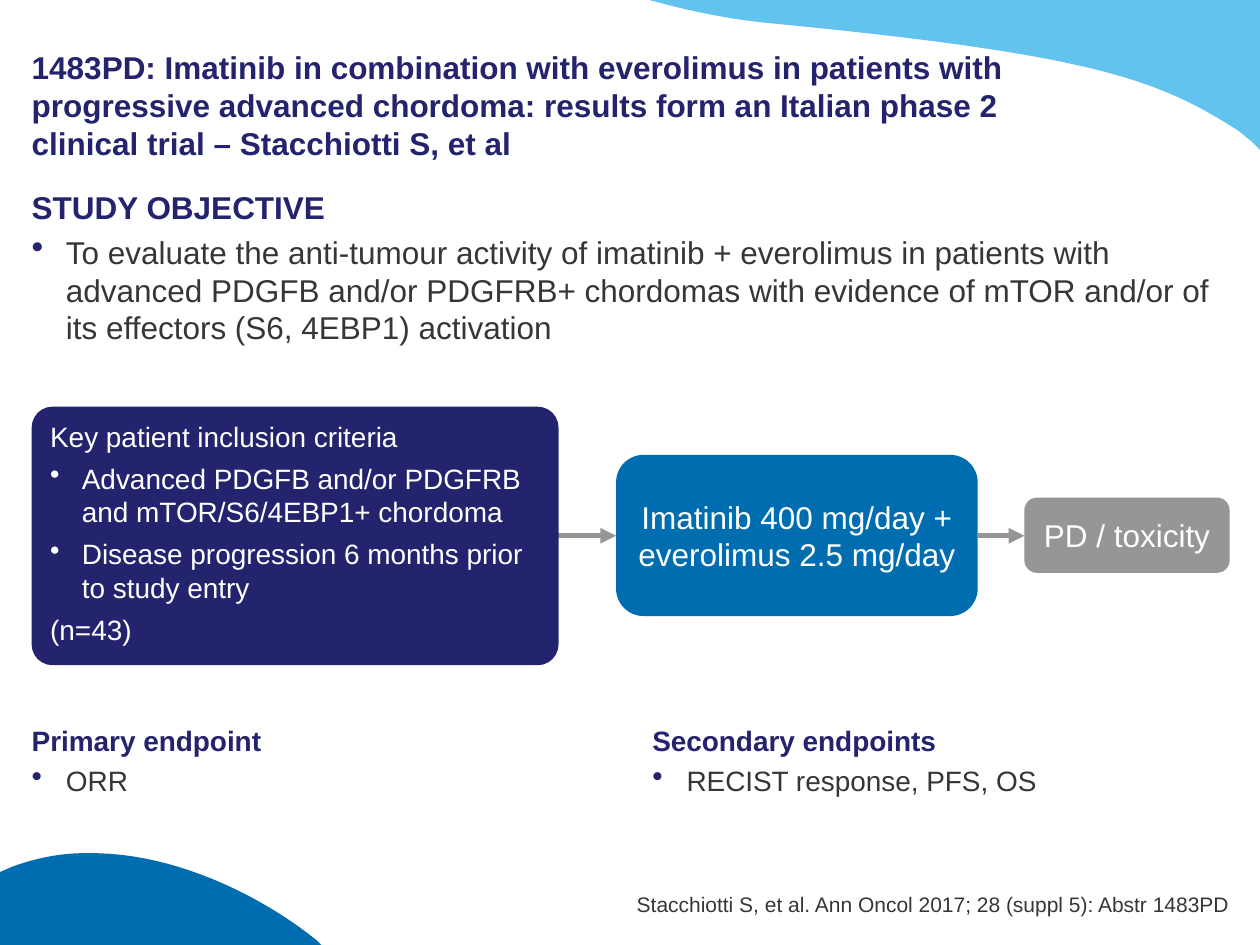
"""Build the chordoma study design slide."""
import lxml.etree
import pptx
import pptx.dml.color
import pptx.enum.shapes
import pptx.enum.text
import pptx.oxml.ns
import pptx.util

Cm, Pt = pptx.util.Cm, pptx.util.Pt
qn = pptx.oxml.ns.qn
ALIGN, ANCHOR = pptx.enum.text.PP_ALIGN, pptx.enum.text.MSO_ANCHOR
NAVY, BLUE, SKY, GREY, DARK, WHITE = "23246D", "006DB0", "62C4EE", "969696", "363636", "FFFFFF"


def paint(target, color):
    """Give a fill or line fill one solid colour."""
    target.solid()
    target.fore_color.rgb = pptx.dml.color.RGBColor.from_string(color)


def write(shape, rows, size, insets, anchor=ANCHOR.TOP, align=ALIGN.LEFT, after=0, bullet=(NAVY, 110)):
    """Write rows of (text, colour, bold, hanging indent in cm) into a shape."""
    tf = shape.text_frame
    tf.word_wrap = True
    tf.vertical_anchor = anchor
    tf.margin_left, tf.margin_top, tf.margin_right, tf.margin_bottom = [Cm(n) for n in insets]
    tf.text = "\n".join(row[0] for row in rows)
    for p, (text, color, bold, indent) in zip(tf.paragraphs, rows):
        p.alignment = align
        p.space_after = Pt(after)
        for r in p.runs:
            r.font.name, r.font.size, r.font.bold = "Arial", Pt(size), bold
            paint(r.font.fill, color)
        if indent:
            pPr = p._p.get_or_add_pPr()
            pPr.set("marL", str(Cm(indent)))
            pPr.set("indent", str(-Cm(indent)))
            tint = lxml.etree.SubElement(pPr, qn("a:buClr"))
            lxml.etree.SubElement(tint, qn("a:srgbClr"), val=bullet[0])
            lxml.etree.SubElement(pPr, qn("a:buSzPct"), val=str(bullet[1] * 1000))
            lxml.etree.SubElement(pPr, qn("a:buChar"), char="•")


prs = pptx.Presentation()
prs.slide_width, prs.slide_height = Cm(25.4), Cm(19.05)
s = prs.slides.add_slide(prs.slide_layouts[6])

waves = [
    (SKY, (13.08, 0), [
        [(25.4, 0)], [(25.4, 3.02)], [(25.22, 2.84)],
        [(25.12, 2.77), (25.04, 2.69), (24.94, 2.62)],
        [(23.29, 1.57), (21.95, 1.09), (15.44, 0.46)],
        [(14.66, 0.38), (13.94, 0.23), (13.28, 0.05)]]),
    (BLUE, (1.7, 17.2), [
        [(3.68, 17.15), (5.54, 18.26), (6.4, 18.97)],
        [(6.48, 19.05)], [(0, 19.05)], [(0, 17.58)], [(0.23, 17.48)],
        [(0.71, 17.3), (1.22, 17.2), (1.7, 17.2)]]),
]
steps = 24
for color, start, segments in waves:
    points, last = [], start
    for segment in segments:
        if len(segment) == 1:
            points += segment
        else:
            for t in [i / steps for i in range(1, steps + 1)]:
                weights = ((1 - t) ** 3, 3 * t * (1 - t) ** 2, 3 * t ** 2 * (1 - t), t ** 3)
                points.append([sum(w * n for w, n in zip(weights, axis))
                               for axis in zip(last, *segment)])
        last = segment[-1]
    builder = s.shapes.build_freeform(Cm(start[0]), Cm(start[1]))
    builder.add_line_segments([(Cm(x), Cm(y)) for x, y in points], close=True)
    wave = builder.convert_to_shape()
    wave.shadow.inherit = False
    wave.line.fill.background()
    paint(wave.fill, color)

flush, inset = (0, 0.13, 0, 0.13), (0.25, 0.13, 0.25, 0.13)
texts = [
    ((0.64, 0.64, 19.81, 2.62), [
        ("1483PD: Imatinib in combination with everolimus in patients with progressive advanced "
         "chordoma: results form an Italian phase 2 clinical trial – Stacchiotti S, et al", NAVY, True, 0)],
     18, (0, 0.13, 0, 0), ANCHOR.BOTTOM, ALIGN.LEFT, 0),
    ((0.64, 3.66, 24.13, 14.76), [
        ("STUDY OBJECTIVE", NAVY, True, 0),
        ("To evaluate the anti-tumour activity of imatinib + everolimus in patients with advanced "
         "PDGFB and/or PDGFRB+ chordomas with evidence of mTOR and/or of its effectors (S6, 4EBP1) "
         "activation", DARK, False, 0.69)],
     18, flush, ANCHOR.TOP, ALIGN.LEFT, 4),
    ((12.27, 17.98, 12.52, 0.51), [
        ("Stacchiotti S, et al. Ann Oncol 2017; 28 (suppl 5): Abstr 1483PD", DARK, False, 0)],
     12, (0, 0, 0, 0), ANCHOR.BOTTOM, ALIGN.RIGHT, 0),
    ((0.64, 14.45, 11.86, 2.18), [
        ("Primary endpoint", NAVY, True, 0), ("ORR", DARK, False, 0.69)],
     16, flush, ANCHOR.TOP, ALIGN.LEFT, 4),
    ((12.9, 14.45, 11.86, 2.82), [
        ("Secondary endpoints", NAVY, True, 0), ("RECIST response, PFS, OS", DARK, False, 0.69)],
     16, inset, ANCHOR.TOP, ALIGN.LEFT, 4),
]
for box, rows, *style in texts:
    write(s.shapes.add_textbox(*[Cm(n) for n in box]), rows, *style)

for x1, x2 in [(11.25, 12.42), (19.71, 20.65)]:
    arrow = s.shapes.add_connector(pptx.enum.shapes.MSO_CONNECTOR.STRAIGHT, Cm(x1), Cm(10.8), Cm(x2), Cm(10.8))
    arrow.line.width = Pt(3)
    paint(arrow.line.fill, GREY)
    lxml.etree.SubElement(arrow.line._get_or_add_ln(), qn("a:tailEnd"), type="triangle")
    lxml.etree.SubElement(arrow._element.spPr, qn("a:effectLst"))

middle = (18, (0.25, 0, 0.25, 0), ANCHOR.MIDDLE, ALIGN.CENTER, 0)
cards = [
    ((12.42, 9.17, 7.29, 3.25), 0.17, BLUE,
     [("Imatinib 400 mg/day + everolimus 2.5 mg/day", WHITE, False, 0)], middle),
    ((20.65, 10.03, 4.14, 1.52), 0.17, GREY, [("PD / toxicity", WHITE, False, 0)], middle),
    ((0.64, 8.2, 10.62, 5.21), 0.08, NAVY, [
        ("Key patient inclusion criteria", WHITE, False, 0),
        ("Advanced PDGFB and/or PDGFRB and mTOR/S6/4EBP1+ chordoma", WHITE, False, 0.64),
        ("Disease progression 6 months prior to study entry", WHITE, False, 0.64),
        ("(n=43)", WHITE, False, 0)],
     (16, inset, ANCHOR.TOP, ALIGN.LEFT, 4.8, (WHITE, 100))),
]
for box, corner, color, rows, style in cards:
    sp = s.shapes.add_shape(pptx.enum.shapes.MSO_SHAPE.ROUNDED_RECTANGLE, *[Cm(n) for n in box])
    sp.adjustments[0] = corner
    sp.shadow.inherit = False
    sp.line.fill.background()
    paint(sp.fill, color)
    write(sp, rows, *style)

prs.save("out.pptx")
